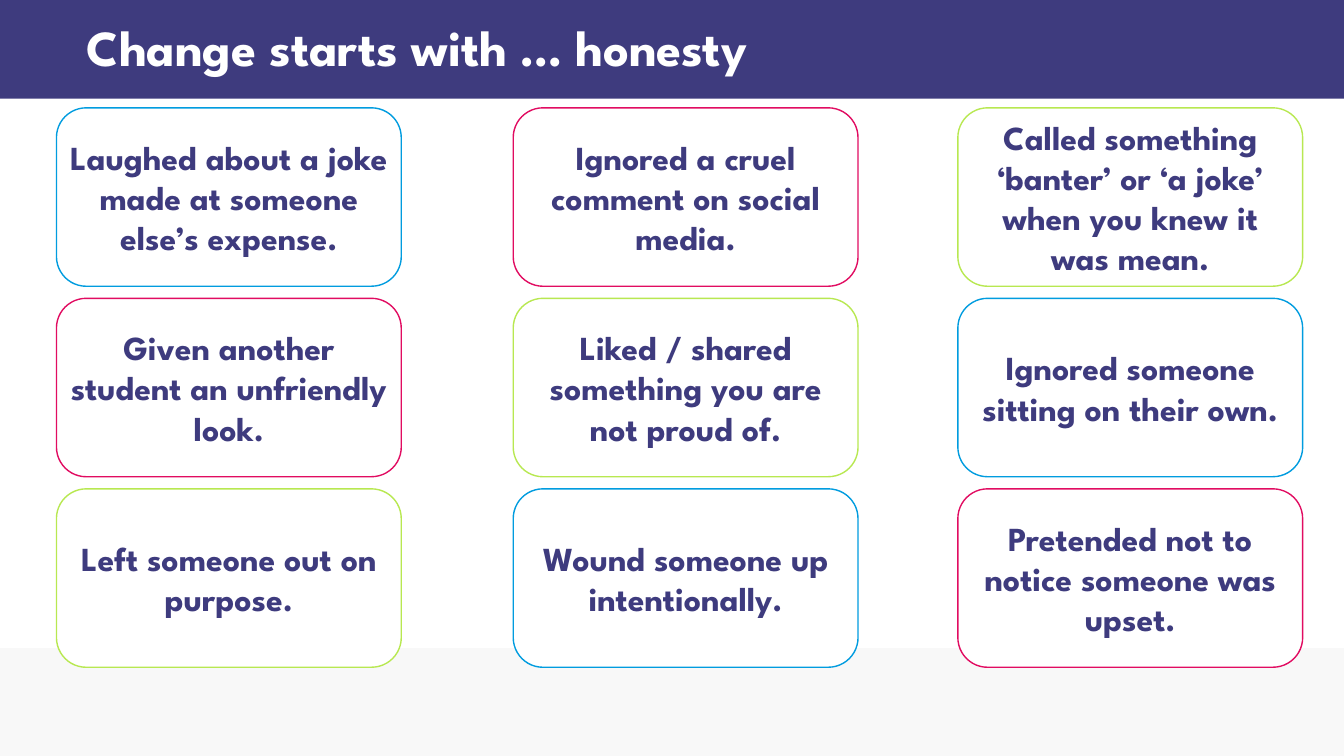
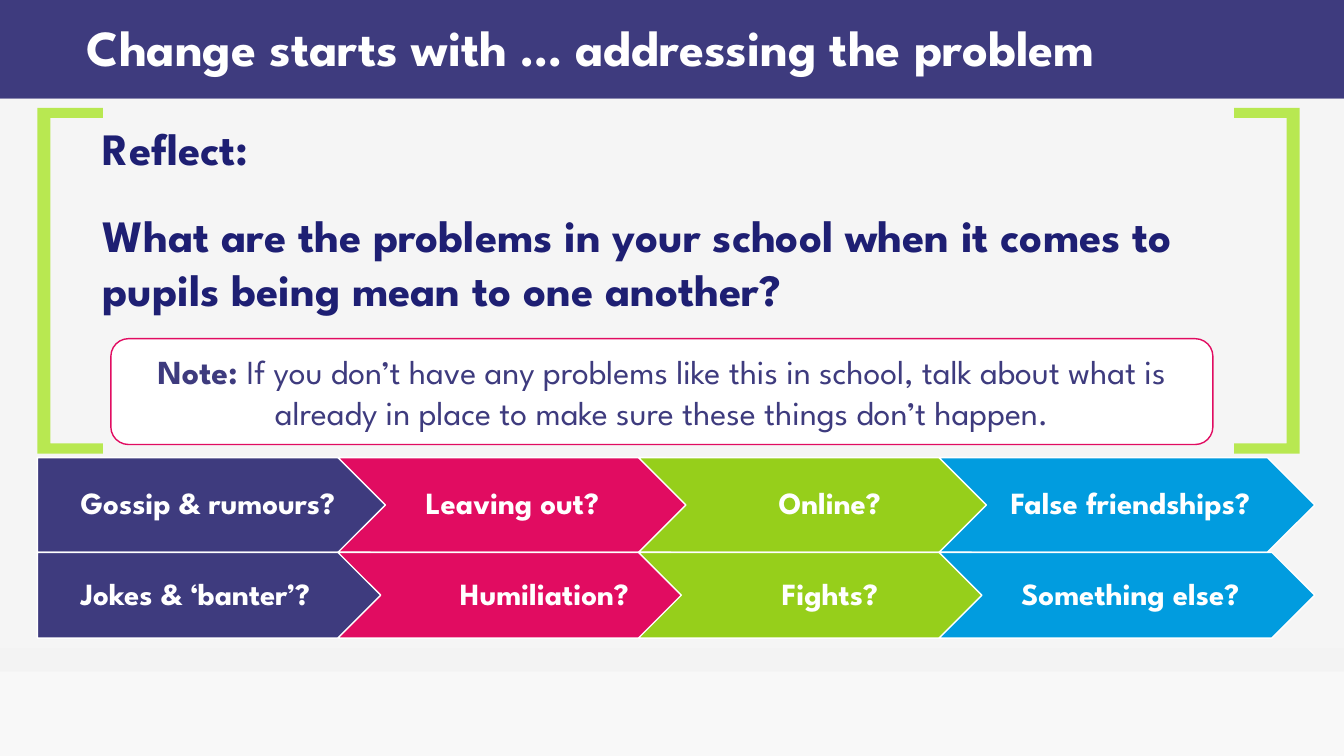
from collections import namedtuple

import pptx
import pptx.dml.color
import pptx.enum.shapes
import pptx.enum.text
import pptx.oxml.ns
import pptx.util
from lxml import etree

RGBColor = pptx.dml.color.RGBColor
Inches = pptx.util.Inches
Pt = pptx.util.Pt
MSO_SHAPE = pptx.enum.shapes.MSO_SHAPE
PP_ALIGN = pptx.enum.text.PP_ALIGN
MSO_ANCHOR = pptx.enum.text.MSO_ANCHOR

WHITE = RGBColor(0xFF, 0xFF, 0xFF)
PALE_GREY = RGBColor(0xF2, 0xF2, 0xF2)
PURPLE = RGBColor(0x3E, 0x3B, 0x7E)
NAVY = RGBColor(0x1E, 0x1F, 0x73)
BLUE = RGBColor(0x01, 0x9C, 0xDF)
PINK = RGBColor(0xE1, 0x0C, 0x61)
LIME = RGBColor(0xB8, 0xE8, 0x51)
GREEN = RGBColor(0x96, 0xCF, 0x1B)

FONT = "League Spartan"
SLIDE_WIDTH, SLIDE_HEIGHT = 13.33, 7.5
HEADER_HEIGHT = 0.98
FOOTER_TOP = 6.43

Box = namedtuple("Box", "left top width height")

# Each inner tuple is a row of cards.
HONESTY_CARDS = (
    ("Laughed about a joke made at someone else’s expense.",
     "Ignored a cruel comment on social media.",
     "Called something ‘banter’ or ‘a joke’ when you knew it was mean."),
    ("Given another student an unfriendly look.",
     "Liked / shared something you are not proud of.",
     "Ignored someone sitting on their own."),
    ("Left someone out on purpose.",
     "Wound someone up intentionally.",
     "Pretended not to notice someone was upset."),
)
CARD_COLOURS = (BLUE, PINK, LIME)

# Label, alignment and left inset of each arrow.
PROBLEMS_TOP = (
    ("Gossip & rumours?", PP_ALIGN.LEFT, 0.43),
    ("Leaving out?", PP_ALIGN.LEFT, 0.4),
    ("Online?", PP_ALIGN.CENTER, 0.1),
    ("False friendships?", PP_ALIGN.CENTER, 0.1),
)
PROBLEMS_BOTTOM = (
    ("Jokes & ‘banter’?", PP_ALIGN.LEFT, 0.43),
    ("Humiliation?", PP_ALIGN.CENTER, 0.4),
    ("Fights?", PP_ALIGN.CENTER, 0.1),
    ("Something else?", PP_ALIGN.CENTER, 0.1),
)
ARROW_COLOURS = (PURPLE, PINK, GREEN, BLUE)


def to_emu(box):
    return [Inches(length) for length in box]


def paint(shape, fill, line=None, opacity=None):
    shape.shadow.inherit = False
    shape.fill.solid()
    shape.fill.fore_color.rgb = fill
    if line is None:
        shape.line.fill.background()
    else:
        shape.line.color.rgb = line
        shape.line.width = Pt(1)
    if opacity is not None:
        colour = shape.fill._xPr.find(".//" + pptx.oxml.ns.qn("a:srgbClr"))
        etree.SubElement(colour, pptx.oxml.ns.qn("a:alpha"),
                         val=str(opacity * 1000))


def add_painted_shape(slide, kind, box, fill, line=None, opacity=None):
    shape = slide.shapes.add_shape(kind, *to_emu(box))
    paint(shape, fill, line, opacity)
    return shape


def set_frame(text_frame, anchor, insets):
    """Wrap the text; insets run left, top, right, bottom."""
    text_frame.word_wrap = True
    text_frame.vertical_anchor = anchor
    (text_frame.margin_left, text_frame.margin_top,
     text_frame.margin_right, text_frame.margin_bottom) = to_emu(insets)


def style_paragraph(paragraph, size, colour, align, spacing=None):
    paragraph.alignment = align
    paragraph.line_spacing = spacing
    for run in paragraph.runs:
        run.font.name = FONT
        run.font.size = Pt(size)
        run.font.bold = True
        run.font.color.rgb = colour


def add_titled_slide(presentation, title):
    slide = presentation.slides.add_slide(presentation.slide_layouts[6])
    add_painted_shape(slide, MSO_SHAPE.RECTANGLE,
                      Box(0, 0, SLIDE_WIDTH, HEADER_HEIGHT), PURPLE)
    add_painted_shape(
        slide, MSO_SHAPE.RECTANGLE,
        Box(0, FOOTER_TOP, SLIDE_WIDTH, SLIDE_HEIGHT - FOOTER_TOP),
        PALE_GREY, opacity=50)
    title_box = slide.shapes.add_textbox(
        *to_emu(Box(0.79, 0.01, 12.26, HEADER_HEIGHT)))
    set_frame(title_box.text_frame, MSO_ANCHOR.MIDDLE, (0.07, 0.04, 0.07, 0.04))
    paragraph = title_box.text_frame.paragraphs[0]
    paragraph.text = title
    style_paragraph(paragraph, 36, WHITE, PP_ALIGN.LEFT, 0.9)
    return slide


def add_card(slide, box, text, outline):
    card = add_painted_shape(slide, MSO_SHAPE.ROUNDED_RECTANGLE, box,
                             WHITE, outline)
    set_frame(card.text_frame, MSO_ANCHOR.MIDDLE, (0.04, 0.05, 0.04, 0.05))
    paragraph = card.text_frame.paragraphs[0]
    paragraph.text = text
    style_paragraph(paragraph, 24, PURPLE, PP_ALIGN.CENTER)
    return card


def add_card_grid(slide, box, rows):
    card_width, card_height = 3.42, 1.77
    column_offsets = (0, 4.53, 8.94)
    row_step = (box.height - card_height) / (len(rows) - 1)
    for row, texts in enumerate(rows):
        for column, text in enumerate(texts):
            card_box = Box(box.left + column_offsets[column],
                           box.top + row * row_step, card_width, card_height)
            outline = CARD_COLOURS[(row + column) % len(CARD_COLOURS)]
            add_card(slide, card_box, text, outline)


def add_bracket(slide, outer, direction, top, height):
    """Draw a square bracket whose arms point left (-1) or right (1)."""
    arm, upright, thickness = 0.65, 0.13, 0.1
    tip, inner = outer + direction * arm, outer + direction * upright
    bottom = top + height
    points = ((tip, top), (outer, top), (outer, bottom), (tip, bottom),
              (tip, bottom - thickness), (inner, bottom - thickness),
              (inner, top + thickness), (tip, top + thickness))
    corners = [(Inches(x), Inches(y)) for x, y in points]
    builder = slide.shapes.build_freeform(*corners[0])
    builder.add_line_segments(corners[1:], close=True)
    paint(builder.convert_to_shape(), LIME)


def add_reflection(slide, box, texts):
    text_box = slide.shapes.add_textbox(
        *to_emu(Box(box.left + 0.55, box.top + 0.08, box.width - 0.55, 1.9)))
    text_frame = text_box.text_frame
    set_frame(text_frame, MSO_ANCHOR.TOP, (0.1, 0.05, 0.1, 0.05))
    text_frame.text = "\n".join(texts)
    for index, paragraph in enumerate(text_frame.paragraphs):
        style_paragraph(paragraph, 32, NAVY, PP_ALIGN.LEFT)
        paragraph.space_after = Pt(12)
        if index:
            paragraph.space_before = Pt(12)
    add_bracket(slide, box.left, 1, box.top, box.height)
    add_bracket(slide, box.left + box.width, -1, box.top, box.height)


def add_note(slide, box, label, text):
    note = add_card(slide, box, label, PINK)
    run = note.text_frame.paragraphs[0].add_run()
    run.text = text
    run.font.name = FONT
    run.font.size = Pt(24)
    run.font.bold = False
    run.font.color.rgb = PURPLE


def add_arrow_row(slide, box, problems):
    """Fill the box with arrows that overlap by a fifth of their width."""
    arrow_width = box.width / (1 + 0.8 * (len(problems) - 1))
    for index, (text, align, left_inset) in enumerate(problems):
        kind = MSO_SHAPE.CHEVRON if index else MSO_SHAPE.PENTAGON
        arrow_box = Box(box.left + index * 0.8 * arrow_width, box.top,
                        arrow_width, box.height)
        arrow = add_painted_shape(slide, kind, arrow_box,
                                  ARROW_COLOURS[index], WHITE)
        set_frame(arrow.text_frame, MSO_ANCHOR.MIDDLE,
                  (left_inset, 0.06, 0.03, 0.06))
        paragraph = arrow.text_frame.paragraphs[0]
        paragraph.text = text
        style_paragraph(paragraph, 22, WHITE, align, 0.9)


def build_honesty_slide(presentation):
    slide = add_titled_slide(presentation, "Change starts with … honesty")
    add_card_grid(slide, Box(0.56, 1.07, 12.36, 5.55), HONESTY_CARDS)


def build_problem_slide(presentation):
    slide = add_titled_slide(presentation,
                             "Change starts with … addressing the problem")
    add_painted_shape(slide, MSO_SHAPE.RECTANGLE,
                      Box(0, HEADER_HEIGHT, SLIDE_WIDTH, 5.68),
                      PALE_GREY, opacity=75)
    add_reflection(slide, Box(0.37, 1.07, 12.52, 3.43), (
        "Reflect:",
        "What are the problems in your school when it comes to pupils "
        "being mean to one another?"))
    add_arrow_row(slide, Box(0.37, 4.54, 12.67, 0.94), PROBLEMS_TOP)
    add_arrow_row(slide, Box(0.37, 5.48, 12.67, 0.85), PROBLEMS_BOTTOM)
    add_note(slide, Box(1.1, 3.36, 10.93, 1.05), "Note: ",
             "If you don’t have any problems like this in school, talk about "
             "what is already in place to make sure these things don’t happen.")


def main():
    presentation = pptx.Presentation()
    presentation.slide_width = Inches(SLIDE_WIDTH)
    presentation.slide_height = Inches(SLIDE_HEIGHT)
    build_honesty_slide(presentation)
    build_problem_slide(presentation)
    presentation.save("out.pptx")


if __name__ == "__main__":
    main()
